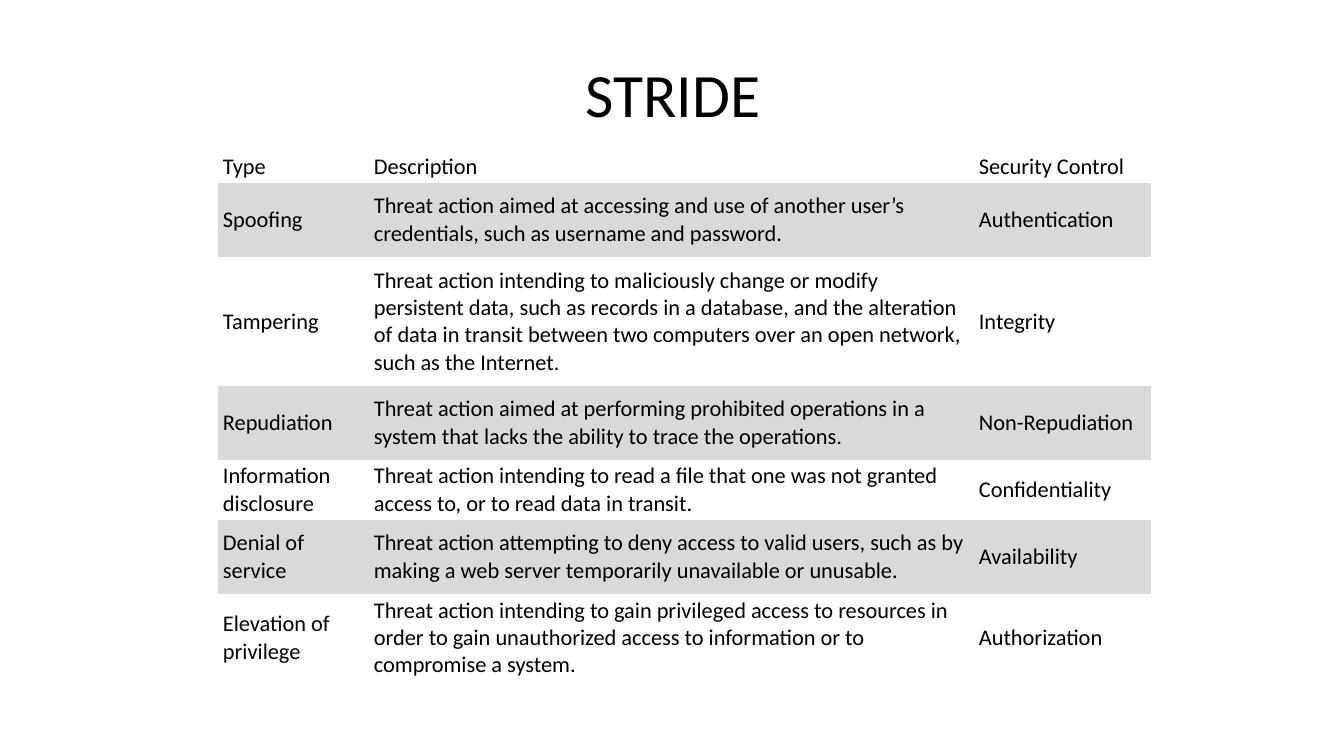
from pptx import Presentation
from pptx.dml.color import RGBColor
from pptx.enum.text import MSO_ANCHOR, PP_ALIGN
from pptx.oxml.ns import qn
from pptx.util import Emu, Pt

TITLE = "STRIDE"
HEADER = ("Type", "Description", "Security Control")
THREATS = [
    ("Spoofing",
     "Threat action aimed at accessing and use of another user’s credentials, "
     "such as username and password.",
     "Authentication"),
    ("Tampering",
     "Threat action intending to maliciously change or modify persistent data, "
     "such as records in a database, and the alteration of data in transit "
     "between two computers over an open network, such as the Internet.",
     "Integrity"),
    ("Repudiation",
     "Threat action aimed at performing prohibited operations in a system that "
     "lacks the ability to trace the operations.",
     "Non-Repudiation"),
    ("Information disclosure",
     "Threat action intending to read a file that one was not granted access "
     "to, or to read data in transit.",
     "Confidentiality"),
    ("Denial of service",
     "Threat action attempting to deny access to valid users, such as by making "
     "a web server temporarily unavailable or unusable.",
     "Availability"),
    ("Elevation of privilege",
     "Threat action intending to gain privileged access to resources in order "
     "to gain unauthorized access to information or to compromise a system.",
     "Authorization"),
]

SLIDE_SIZE = (1344, 756)
TITLE_BOX = (584, 54, 178, 77)
TABLE_LEFT, TABLE_TOP = 218, 151
COLUMN_WIDTHS = (151, 605, 177)
ROW_HEIGHTS = (32, 74, 129, 74, 60, 74, 88)
CELL_MARGIN_X, CELL_MARGIN_Y = 5, 2

FONT = "Calibri"
BLACK = RGBColor(0x00, 0x00, 0x00)
WHITE = RGBColor(0xFF, 0xFF, 0xFF)
BAND_GRAY = RGBColor(0xD9, 0xD9, 0xD9)
NO_STYLE_NO_GRID = "{2D5ABB26-0587-4C30-8999-92F81FD0307C}"
EMU_PER_PX = 914400 / 100.8


def px(length):
    """Convert pixels to EMU."""
    return Emu(round(length * EMU_PER_PX))


def write(text_frame, text, size):
    """Set the text and format its run."""
    text_frame.text = text
    font = text_frame.paragraphs[0].runs[0].font
    font.name, font.size, font.bold = FONT, Pt(size), False
    font.color.rgb = BLACK


def add_title(slide):
    """Place the title in the title placeholder."""
    title = slide.shapes.title
    title.left, title.top, title.width, title.height = map(px, TITLE_BOX)
    frame = title.text_frame
    frame.margin_left = frame.margin_right = frame.margin_top = frame.margin_bottom = 0
    frame.vertical_anchor = MSO_ANCHOR.MIDDLE
    frame.word_wrap = False
    write(frame, TITLE, 44)
    frame.paragraphs[0].alignment = PP_ALIGN.CENTER


def add_threat_table(slide):
    """Add the threat table with every second row shaded."""
    rows = [HEADER, *THREATS]
    graphic_frame = slide.shapes.add_table(
        len(rows), len(HEADER), px(TABLE_LEFT), px(TABLE_TOP),
        px(sum(COLUMN_WIDTHS)), px(sum(ROW_HEIGHTS)))
    table = graphic_frame.table
    table.first_row = table.horz_banding = False
    next(graphic_frame.element.iter(qn("a:tableStyleId"))).text = NO_STYLE_NO_GRID
    for column, width in zip(table.columns, COLUMN_WIDTHS):
        column.width = px(width)
    for row, height in zip(table.rows, ROW_HEIGHTS):
        row.height = px(height)
    for row_index, texts in enumerate(rows):
        for column_index, text in enumerate(texts):
            cell = table.cell(row_index, column_index)
            cell.margin_left = cell.margin_right = px(CELL_MARGIN_X)
            cell.margin_top = cell.margin_bottom = px(CELL_MARGIN_Y)
            cell.vertical_anchor = MSO_ANCHOR.MIDDLE
            cell.fill.solid()
            cell.fill.fore_color.rgb = BAND_GRAY if row_index % 2 else WHITE
            write(cell.text_frame, text, 16)


def main():
    """Build and save the presentation."""
    presentation = Presentation()
    presentation.slide_width, presentation.slide_height = map(px, SLIDE_SIZE)
    slide = presentation.slides.add_slide(presentation.slide_layouts.get_by_name("Title Only"))
    add_title(slide)
    add_threat_table(slide)
    presentation.save("out.pptx")


if __name__ == "__main__":
    main()
